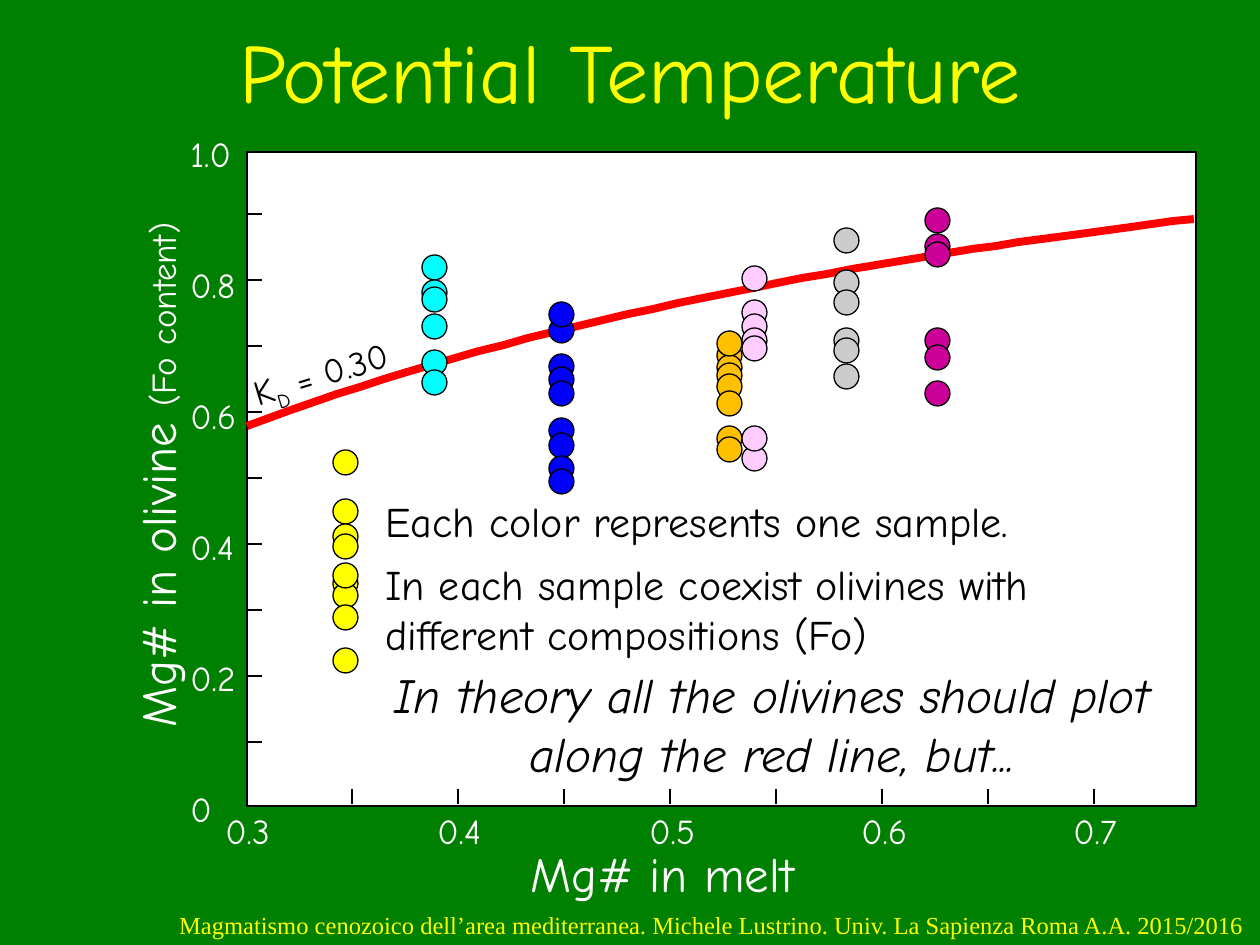
from lxml import etree
from pptx import Presentation
from pptx.dml.color import RGBColor
from pptx.enum.shapes import MSO_CONNECTOR as CONN, MSO_SHAPE as SHAPE
from pptx.enum.text import MSO_ANCHOR as ANCHOR, MSO_AUTO_SIZE as AUTO, PP_ALIGN as ALIGN
from pptx.oxml.ns import qn
from pptx.util import Emu, Pt

PX = 914400 / 126
WHITE, BLACK, YELLOW, RED = "FFFFFF", "000000", "FFFF00", "FF0000"


def paint(fmt, color, width=None):
    """Colour a fill, or a line when a width in points is given."""
    if width is None:
        fmt.solid()
        fmt.fore_color.rgb = RGBColor.from_string(color)
    else:
        fmt.width = Pt(width)
        paint(fmt.fill, color)


def text(content, x, y, w, h, size=20, color=WHITE, font="Comic Neue", align=ALIGN.LEFT,
         anchor=ANCHOR.TOP, wrap=False, italic=False, fill=None, rotation=0):
    """content is a string or a list of (string, size, baseline) runs."""
    sp = s.shapes.add_textbox(*[Emu(round(v * PX)) for v in (x, y, w, h)])
    sp.rotation = rotation
    if fill:
        paint(sp.fill, fill)
    tf = sp.text_frame
    tf.word_wrap, tf.auto_size, tf.vertical_anchor = wrap, AUTO.SHAPE_TO_FIT_TEXT, anchor
    p = tf.paragraphs[0]
    p.alignment = align
    for part, pt, baseline in [(content, size, 0)] if isinstance(content, str) else content:
        r = p.add_run()
        r.text = part
        r.font.size, r.font.name = Pt(pt), font
        if italic:
            r.font.italic = True
        paint(r.font.fill, color)
        if baseline:
            r.font._element.set("baseline", str(baseline * 1000))


prs = Presentation()
prs.slide_width, prs.slide_height = Emu(round(1260 * PX)), Emu(round(945 * PX))
s = prs.slides.add_slide(prs.slide_layouts[6])
paint(s.background.fill, "008000")

text("Magmatismo cenozoico dell’area mediterranea. Michele Lustrino. "
     "Univ. La Sapienza Roma A.A. 2015/2016", 136, 903, 1121, 43, size=14, color=YELLOW,
     font="Times New Roman", align=ALIGN.RIGHT, anchor=ANCHOR.MIDDLE, wrap=True)

# Plot area and axes
frame = s.shapes.add_shape(SHAPE.RECTANGLE, *[Emu(round(v * PX)) for v in (247, 152, 949, 654)])
frame.shadow.inherit = False
paint(frame.fill, WHITE)
paint(frame.line, BLACK, 1.5)

text([("Mg# in olivine ", 28, 0), ("(Fo content)", 20, 0)], -127, 420, 568, 72, rotation=270)
text("Mg# in melt", 518, 837, 309, 72, size=28)
for i, label in enumerate(["0.3", "0.4", "0.5", "0.6", "0.7"]):
    text(label, 213 + 212 * i, 803, 78, 55)
for i, (label, w) in enumerate([("0", 47), ("0.2", 78), ("0.4", 78), ("0.6", 78),
                                ("0.8", 78), ("1.0", 72)]):
    text(label, 178, 781 - 131 * i, w, 55)

x_ticks = [(352 + 106 * i, 804, 352 + 106 * i, 789) for i in range(8)]
y_ticks = [(248, 742 - 66 * i, 262, 742 - 66 * i) for i in range(9)]
for ends in x_ticks + y_ticks:
    tick = s.shapes.add_connector(CONN.STRAIGHT, *[Emu(round(v * PX)) for v in ends])
    paint(tick.line, BLACK, 1.5)
    etree.SubElement(tick._element.spPr, qn("a:effectLst"))

# Title and comments
text("Potential Temperature", 0, 13, 1260, 113, size=48, color=YELLOW,
     align=ALIGN.CENTER, wrap=True)
text("In theory all the olivines should plot along the red line, but...", 348, 658, 848, 131,
     size=28, color=BLACK, align=ALIGN.CENTER, wrap=True, italic=True)
text("Each color represents one sample.", 373, 489, 694, 63,
     size=24, color=BLACK, wrap=True, fill=WHITE)
text("In each sample coexist olivines with different compositions (Fo)", 373, 552, 818, 115,
     size=24, color=BLACK, wrap=True, fill=WHITE)

# Equilibrium curve, sampled from a cubic Bezier
text([("K", 20, 0), ("D", 20, -25), (" = 0.30", 20, 0)], 239, 344, 178, 55,
     color=BLACK, rotation=343.1)
controls = [(247, 426), (538, 315), (922, 251), (1194, 219)]
STEPS = 40
points = []
for i in range(STEPS + 1):
    t = i / STEPS
    weights = [(1 - t) ** 3, 3 * t * (1 - t) ** 2, 3 * t ** 2 * (1 - t), t ** 3]
    points.append([sum(k * c[axis] for k, c in zip(weights, controls)) for axis in (0, 1)])
builder = s.shapes.build_freeform(*points[0], scale=PX)
builder.add_line_segments(points[1:], close=False)
curve = builder.convert_to_shape()
curve.shadow.inherit = False
curve.fill.background()
paint(curve.line, RED, 4.5)

# Olivines: colour, left edge and tops of each sample
samples = [
    ("0000FF", 549, [318, 354, 367, 381, 418, 433, 456, 469, 302]),
    ("FFC000", 717, [343, 355, 363, 331, 374, 391, 426, 437]),
    ("00FFFF", 422, [255, 280, 287, 314, 350, 370]),
    ("FFCCFF", 742, [266, 300, 314, 328, 336, 446, 426]),
    ("CCCCCC", 834, [228, 270, 290, 328, 338, 364]),
    ("CC0099", 925, [208, 234, 242, 328, 345, 381]),
    (YELLOW, 333, [499, 524, 534, 571, 583, 563, 605, 450, 648]),
]
for color, x, tops in samples:
    for y in tops:
        dot = s.shapes.add_shape(SHAPE.OVAL, *[Emu(round(v * PX)) for v in (x, y, 25, 25)])
        dot.shadow.inherit = False
        paint(dot.fill, color)
        paint(dot.line, BLACK, 0.75)

prs.save("out.pptx")
